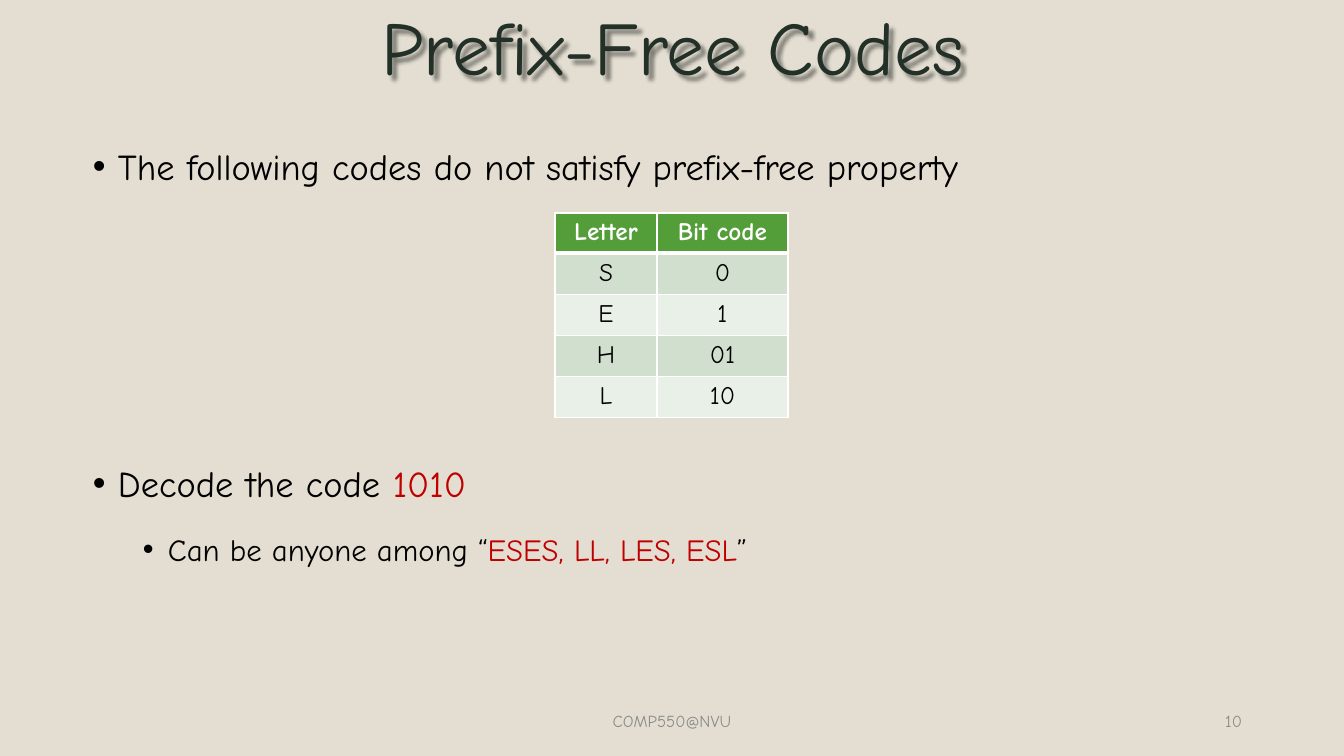
from lxml import etree
from pptx import Presentation
from pptx.dml.color import RGBColor
from pptx.enum.text import MSO_ANCHOR, PP_ALIGN
from pptx.oxml.ns import qn
from pptx.util import Pt

EMU_PER_PX = 914400 / 100.8
FONT = "Comic Neue"
LEFT, CENTER, RIGHT = PP_ALIGN.LEFT, PP_ALIGN.CENTER, PP_ALIGN.RIGHT
TOP, MIDDLE = MSO_ANCHOR.TOP, MSO_ANCHOR.MIDDLE

SAND = RGBColor(0xE3, 0xDE, 0xD1)
PINE = RGBColor(0x22, 0x30, 0x28)
GRAY = RGBColor(0x8C, 0x8C, 0x8C)
BLACK = RGBColor(0, 0, 0)
WHITE = RGBColor(0xFF, 0xFF, 0xFF)
RED = RGBColor(0xC0, 0, 0)
GREEN = RGBColor(0x54, 0x9E, 0x39)
BANDS = (RGBColor(0xD1, 0xDF, 0xCE), RGBColor(0xE9, 0xF0, 0xE8))

CODES = [("Letter", "Bit code"), ("S", "0"), ("E", "1"), ("H", "01"), ("L", "10")]
POINTS = [
    (0, 26, 10, [("The following codes do not satisfy prefix-free property", BLACK)]),
    (0, 26, 180, [("Decode the code ", BLACK), ("1010", RED)]),
    (1, 22, 5, [("Can be anyone among “", BLACK), ("ESES, LL, LES, ESL", RED), ("”", BLACK)]),
]


def px(length):
    """Turn pixels into EMU."""
    return round(length * EMU_PER_PX)


def add_node(parent, tag, **attributes):
    """Append a drawing element with the given attributes."""
    return etree.SubElement(parent, qn(tag), {key: str(value) for key, value in attributes.items()})


def add_span(para, text, size, color, bold=False):
    """Append one formatted run to a paragraph."""
    span = para.add_run()
    span.text = text
    for name, value in {"name": FONT, "size": Pt(size), "bold": bold}.items():
        setattr(span.font, name, value)
    span.font.color.rgb = color


def add_text_box(page, box, anchor):
    """Add an empty wrapping text box."""
    shape = page.shapes.add_textbox(*map(px, box))
    shape.text_frame.word_wrap = True
    shape.text_frame.vertical_anchor = anchor
    return shape


def add_label(page, box, text, size, color, align):
    """Add a one-line text box centred vertically."""
    shape = add_text_box(page, box, MIDDLE)
    para = shape.text_frame.paragraphs[0]
    para.alignment = align
    add_span(para, text, size, color)
    return shape


def add_title(page, box):
    """Add the title with its soft shadow."""
    shape = add_label(page, box, "Prefix-Free Codes", 54, PINE, CENTER)
    shape.text_frame.paragraphs[0].line_spacing = 0.9
    effects = add_node(shape.element.spPr, "a:effectLst")
    shadow = add_node(effects, "a:outerShdw", blurRad=px(4), dist=px(5), dir=2700000, algn="tl", rotWithShape=0)
    tint = add_node(shadow, "a:srgbClr", val=BLACK)
    add_node(tint, "a:alpha", val=43000)


def add_points(page, box):
    """Add the bulleted statements."""
    frame = add_text_box(page, box, TOP).text_frame
    for index, (level, size, before, spans) in enumerate(POINTS):
        para = frame.add_paragraph() if index else frame.paragraphs[0]
        formats = {"level": level, "alignment": LEFT, "line_spacing": 1.5, "space_before": Pt(before)}
        for name, value in formats.items():
            setattr(para, name, value)
        properties = para._p.get_or_add_pPr()
        properties.set("marL", str(px(25 + 50 * level)))
        properties.set("indent", str(px(-25)))
        add_node(properties, "a:buFont", typeface="Arial")
        add_node(properties, "a:buChar", char="•")
        for text, color in spans:
            add_span(para, text, size, color)


def add_borders(cell, top, bottom):
    """Draw white cell borders with the given top and bottom widths."""
    properties = cell._tc.get_or_add_tcPr()
    for tag, width in {"a:lnL": 1, "a:lnR": 1, "a:lnT": top, "a:lnB": bottom}.items():
        line = add_node(properties, tag, w=Pt(width))
        add_node(add_node(line, "a:solidFill"), "a:srgbClr", val=WHITE)


def add_code_table(page, box):
    """Add the table of letters and bit codes."""
    frame = page.shapes.add_table(len(CODES), len(CODES[0]), *map(px, box))
    table = frame.table
    table.horz_banding = False
    for column, width in zip(table.columns, (102, 131)):
        column.width = px(width)
    for index, values in enumerate(CODES):
        header = index == 0
        table.rows[index].height = px(39 if header else 41)
        for cell, text in zip(table.rows[index].cells, values):
            add_borders(cell, 3 if index == 1 else 1, 3 if header else 1)
            cell.fill.solid()
            cell.fill.fore_color.rgb = GREEN if header else BANDS[(index - 1) % 2]
            para = cell.text_frame.paragraphs[0]
            para.alignment = CENTER
            add_span(para, text, 18, WHITE if header else BLACK, header)


def add_footer(page, box):
    """Add the course name and the page number."""
    left, top, width, height = box
    add_label(page, (left, top, 454, height), "COMP550@NVU", 12, GRAY, CENTER)
    add_label(page, (left + width - 302, top, 302, height), "10", 12, GRAY, RIGHT)


def main():
    """Build and save the slide."""
    deck = Presentation()
    deck.slide_width, deck.slide_height = px(1344), px(756)
    page = deck.slides.add_slide(deck.slide_layouts[6])
    page.background.fill.solid()
    page.background.fill.fore_color.rgb = SAND
    add_title(page, (93, 0, 1159, 103))
    add_points(page, (83, 117, 1179, 585))
    add_code_table(page, (555, 213, 233, 203))
    add_footer(page, (445, 701, 807, 40))
    deck.save("out.pptx")


if __name__ == "__main__":
    main()
